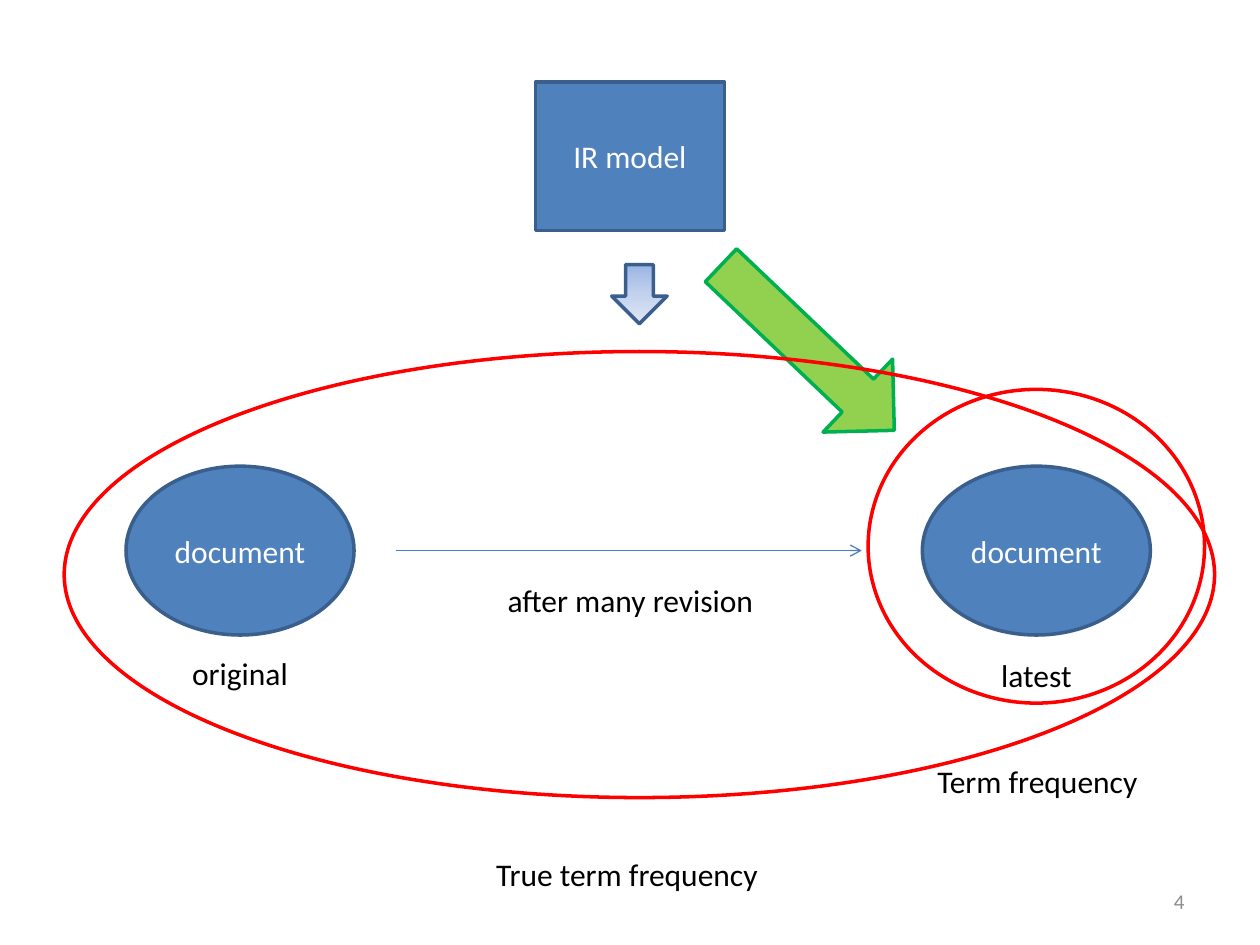
import copy

import pptx
import pptx.dml.color
import pptx.enum.shapes
import pptx.enum.text
import pptx.oxml
import pptx.oxml.ns
import pptx.util
from pptx.util import Inches

COLORS = {
    "blue": "4F81BD", "navy": "3A5F8C", "link": "4B7EBC",
    "lime": "92D050", "green": "00B050", "red": "FF0000",
    "white": "FFFFFF", "black": "000000", "gray": "8C8C8C",
}
DOWN_GRADIENT = ["9AB5E4", "C2D1ED", "E1E8F5"]
FONT = "Calibri"
SHAPE = pptx.enum.shapes.MSO_SHAPE
ALIGN = pptx.enum.text.PP_ALIGN
ANCHOR = pptx.enum.text.MSO_ANCHOR


def rgb(name):
    return pptx.dml.color.RGBColor.from_string(COLORS[name])


def write(frame, text, color, align, size=18):
    paragraph = frame.paragraphs[0]
    paragraph.alignment = align
    run = paragraph.add_run()
    run.text = text
    run.font.name = FONT
    run.font.size = pptx.util.Pt(size)
    run.font.color.rgb = rgb(color)


def add_label(shapes, box, text, align=ALIGN.LEFT, color="black", size=18,
              anchor=ANCHOR.TOP, wrap=True):
    label = shapes.add_textbox(*map(Inches, box))
    frame = label.text_frame
    frame.word_wrap = wrap
    frame.vertical_anchor = anchor
    write(frame, text, color, align, size)


def add_figure(shapes, kind, box, line, fill=None, text=None):
    figure = shapes.add_shape(kind, *map(Inches, box))
    figure.shadow.inherit = False
    figure.line.color.rgb = rgb(line)
    figure.line.width = pptx.util.Pt(2)
    if fill:
        figure.fill.solid()
        figure.fill.fore_color.rgb = rgb(fill)
    else:
        figure.fill.background()
    if text:
        figure.text_frame.vertical_anchor = ANCHOR.MIDDLE
        write(figure.text_frame, text, "white", ALIGN.CENTER)
    return figure


def add_revision_arrow(shapes, left, right, y):
    arrow = shapes.add_connector(
        pptx.enum.shapes.MSO_CONNECTOR.STRAIGHT,
        Inches(left), Inches(y), Inches(right), Inches(y))
    arrow.line.color.rgb = rgb("link")
    arrow.line.width = pptx.util.Pt(0.75)
    tail = pptx.oxml.parse_xml(
        f'<a:tailEnd {pptx.oxml.ns.nsdecls("a")} type="arrow"/>')
    arrow.line._get_or_add_ln().append(tail)
    arrow._element.spPr.append(pptx.oxml.parse_xml(
        f'<a:effectLst {pptx.oxml.ns.nsdecls("a")}/>'))


def add_document(shapes, box, caption, caption_gap):
    left, top, width, height = box
    add_figure(shapes, SHAPE.OVAL, box, "navy", "blue", "document")
    caption_width = 1.18
    add_label(shapes, (left + (width - caption_width) / 2,
                       top + height + caption_gap, caption_width, 0.4),
              caption, ALIGN.CENTER)


def add_history(slide, box):
    """Original document, revision arrow and latest document."""
    left, top, width, height = box
    shapes = slide.shapes.add_group_shape().shapes
    document_width = 1.81
    add_document(shapes, (left, top, document_width, height), "original", 0.1)
    add_revision_arrow(shapes, left + 2.14, left + 5.84, top + height / 2)
    add_label(shapes, (left + 2.93, top + 0.86, 2.28, 0.4),
              "after many revision")
    add_document(shapes, (left + width - document_width, top,
                          document_width, height), "latest", 0.12)


def add_model(slide, box):
    add_figure(slide.shapes, SHAPE.RECTANGLE, box, "navy", "blue", "IR model")


def add_latest_scope(slide, box):
    """Green arrow to the latest document, its ring and its label."""
    left, top, _, height = box
    arrow = add_figure(slide.shapes, SHAPE.UP_ARROW,
                       (left - 0.88, top - 1.28, 0.8, 1.9), "green", "lime")
    arrow.rotation = 133.6
    arrow.adjustments[0] = 0.451
    arrow.adjustments[1] = 0.5
    add_figure(slide.shapes, SHAPE.OVAL, box, "red")
    add_label(slide.shapes, (left + 0.45, top + height + 0.42, 1.81, 0.4),
              "Term frequency")


def add_full_scope(slide, box):
    """Ring round the whole history, its arrow and its label."""
    left, top, width, height = box
    middle = left + width / 2
    add_figure(slide.shapes, SHAPE.OVAL, box, "red")

    arrow = add_figure(slide.shapes, SHAPE.DOWN_ARROW,
                       (middle - 0.22, top - 0.69, 0.44, 0.47), "navy")
    arrow.fill.gradient()
    arrow.fill.gradient_angle = 270
    stops = arrow.fill.gradient_stops
    first = stops[0]._gs
    first.addnext(copy.deepcopy(first))
    for index, color in enumerate(DOWN_GRADIENT):
        stop = arrow.fill.gradient_stops[index]
        stop.position = index / 2
        stop.color.rgb = pptx.dml.color.RGBColor.from_string(color)

    add_label(slide.shapes, (3.84, top + height + 0.41, 2.3, 0.4),
              "True term frequency", wrap=False)


def add_page_number(slide, box):
    add_label(slide.shapes, box, "4", ALIGN.RIGHT, "gray", 12, ANCHOR.MIDDLE)


def main():
    deck = pptx.Presentation()
    deck.slide_width = Inches(10)
    deck.slide_height = Inches(7.5)
    slide = deck.slides.add_slide(deck.slide_layouts[6])

    add_page_number(slide, (7.17, 6.95, 2.33, 0.4))
    add_model(slide, (4.25, 0.65, 1.5, 1.18))
    add_history(slide, (1, 3.7, 8.13, 1.34))
    add_latest_scope(slide, (6.89, 3.09, 2.67, 2.49))
    add_full_scope(slide, (0.51, 2.79, 9.13, 3.54))

    deck.save("out.pptx")


if __name__ == "__main__":
    main()
